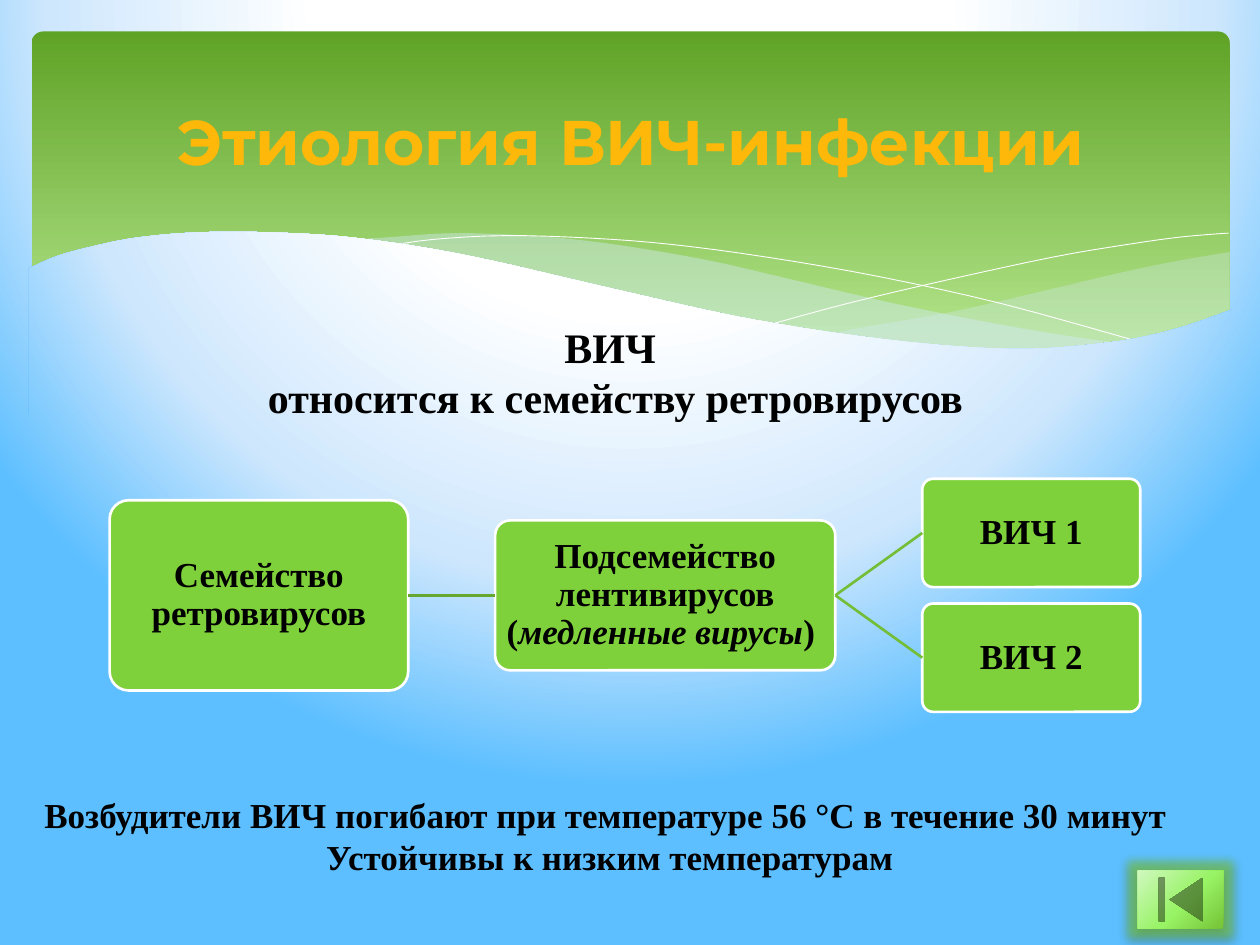
import pptx
import pptx.dml.color
import pptx.enum.shapes
import pptx.enum.text
import pptx.oxml
import pptx.oxml.ns
import pptx.util
from lxml import etree

Inches, Pt = pptx.util.Inches, pptx.util.Pt
RGB = pptx.dml.color.RGBColor.from_string
SHAPE = pptx.enum.shapes.MSO_SHAPE
MIDDLE = pptx.enum.text.MSO_ANCHOR.MIDDLE
CENTER = pptx.enum.text.PP_ALIGN.CENTER
qn = pptx.oxml.ns.qn
NS = pptx.oxml.ns.nsdecls("a")

COLORS = {
    "white": "FFFFFF", "black": "000000", "title": "FEB80A",
    "banner_top": "5FA326", "banner_bottom": "B2E389", "wave": "D6ECFF",
    "node": "7FD13B", "trunk": "66A72F", "branch": "73BE36",
    "sky_mid": "CEE7FD", "sky": "5DBFFF",
    "button_light": "D0F8BF", "button_mid": "98F365", "button_dark": "76C337",
}
SERIF = {"name": "Times New Roman", "bold": True}
TITLE = {"name": "Montserrat", "bold": True, "size": Pt(36)}
HEADING = SERIF | {"size": Pt(24)}
BODY = SERIF | {"size": Pt(20)}


def write(box, lines, style, color="black", spacing=1.0):
    """Fill a box with centred lines, each a list of (text, italic) spans."""
    frame = box.text_frame
    frame.word_wrap = True
    for number, spans in enumerate(lines):
        para = frame.add_paragraph() if number else frame.paragraphs[0]
        para.alignment, para.line_spacing = CENTER, spacing
        for text, italic in spans:
            span = para.add_run()
            span.text = text
            for key, value in style.items():
                setattr(span.font, key, value)
            span.font.italic = italic
            span.font.color.rgb = RGB(COLORS[color])
    return frame


def draw_curve(points, corners=(), closed=False):
    """Freeform along a Catmull-Rom curve, then straight through corners."""
    padded = [points[0], *points, points[-1]]
    smooth = []
    for a, b, c, d in zip(padded, padded[1:], padded[2:], padded[3:]):
        for t in (0.25, 0.5, 0.75, 1):
            smooth.append([
                Inches(0.5 * (2 * q + (r - p) * t + (2 * p - 5 * q + 4 * r - s) * t**2
                              + (3 * q - p - 3 * r + s) * t**3))
                for p, q, r, s in zip(a, b, c, d)])
    smooth += [(Inches(x), Inches(y)) for x, y in corners]
    builder = page.shapes.build_freeform(Inches(points[0][0]), Inches(points[0][1]))
    builder.add_line_segments(smooth, close=closed)
    curve = builder.convert_to_shape()
    curve.shadow.inherit = False
    return curve


deck = pptx.Presentation()
deck.slide_width, deck.slide_height = Inches(10), Inches(7.5)
page = deck.slides.add_slide(deck.slide_layouts[6])
page.background.fill.gradient()

# Banner
banner = page.shapes.add_shape(
    SHAPE.ROUNDED_RECTANGLE, Inches(0.25), Inches(0.25), Inches(9.51), Inches(2.7))
banner.adjustments[0] = 0.034
banner.shadow.inherit = False
banner.line.fill.background()
banner.fill.gradient()
banner.fill.gradient_angle = 270
for stop, position, name in zip(
        banner.fill.gradient_stops, (0, 0.9), ("banner_top", "banner_bottom")):
    stop.position, stop.color.rgb = position, RGB(COLORS[name])

# Translucent waves: outline and opacity in percent
waves = [
    ([(9.76, 2), (9.35, 2.07), (8.91, 2.16), (8.32, 2.3), (7.53, 2.48), (6.61, 2.65),
      (7.05, 2.71), (7.57, 2.76), (8.14, 2.78), (8.63, 2.75), (9.05, 2.69),
      (9.42, 2.59), (9.76, 2.47)], 29),
    ([(8.93, 2.73), (8.37, 2.65), (7.75, 2.54), (7.06, 2.4), (6.29, 2.22), (5.69, 2.08),
      (5.14, 1.98), (4.65, 1.91), (4.2, 1.87), (3.61, 1.85), (3.13, 1.88), (2.86, 1.91),
      (3.42, 1.99), (4.04, 2.11), (4.91, 2.32), (5.66, 2.48), (6.34, 2.61), (6.95, 2.7),
      (7.48, 2.76), (8.07, 2.78), (8.57, 2.77), (8.93, 2.73)], 40),
]
for points, opacity in waves:
    wave = draw_curve(points, closed=True)
    wave.line.fill.background()
    wave.fill.solid()
    wave.fill.fore_color.rgb = RGB(COLORS["wave"])
    tint = wave._element.spPr.find(".//" + qn("a:srgbClr"))
    etree.SubElement(tint, qn("a:alpha"), val=str(opacity * 1000))

hairlines = [
    [(3.09, 1.95), (3.44, 1.9), (4.01, 1.87), (4.69, 1.89), (5.33, 1.94), (6.08, 2.04),
     (6.95, 2.19), (7.95, 2.41), (9.07, 2.72)],
    [(6.13, 2.57), (6.72, 2.41), (7.48, 2.23), (8.36, 2.04), (8.95, 1.94), (9.38, 1.88),
     (9.75, 1.85)],
]
for points in hairlines:
    hairline = draw_curve(points)
    hairline.fill.background()
    hairline.line.color.rgb = RGB(COLORS["white"])
    hairline.line.width = Pt(0.5)

# Lower edge of the banner, filled with the slide background
edge = draw_curve(
    [(9.77, 2.46), (9.4, 2.59), (8.99, 2.69), (8.5, 2.75), (8.09, 2.77), (7.61, 2.75),
     (7.08, 2.7), (6.48, 2.62), (5.79, 2.5), (5.03, 2.33), (4.47, 2.2), (3.91, 2.07),
     (3.4, 1.97), (2.92, 1.9), (2.5, 1.86), (1.93, 1.84), (1.46, 1.85), (1.06, 1.89),
     (0.76, 1.95), (0.46, 2.03), (0.23, 2.13)],
    corners=[(0.23, 3.29), (9.77, 3.29)], closed=True)
edge.line.fill.background()
edge._element.remove(edge._element.find(qn("p:style")))
edge._element.set("useBgFill", "1")

# Text
texts = [
    ((0.51, 0.6, 9, 1.02), ["Этиология ВИЧ-инфекции"], TITLE, "title"),
    ((0, 2.5, 9.77, 0.91), ["ВИЧ ", "относится к семейству ретровирусов"], HEADING, "black"),
    ((0.23, 6.25, 9.22, 0.77),
     ["Возбудители ВИЧ погибают при температуре 56 °С в течение 30 минут ",
      "Устойчивы к низким температурам"], BODY, "black"),
]
for place, lines, style, color in texts:
    box = page.shapes.add_textbox(*map(Inches, place))
    frame = write(box, [[(line, False)] for line in lines], style, color)
    if style is TITLE:
        frame.vertical_anchor = MIDDLE

# Classification tree
nodes = [
    ((0.87, 3.97, 2.37, 1.51), [("Семейство ретровирусов", False)]),
    ((3.93, 4.13, 2.7, 1.19), [("Подсемейство лентивирусов (", False),
                               ("медленные вирусы", True), (") ", False)]),
    ((7.32, 3.8, 1.73, 0.86), [("ВИЧ 1", False)]),
    ((7.32, 4.79, 1.73, 0.86), [("ВИЧ 2", False)]),
]
tree = []
for place, spans in nodes:
    node = page.shapes.add_shape(SHAPE.ROUNDED_RECTANGLE, *map(Inches, place))
    node.adjustments[0] = 0.1
    node.shadow.inherit = False
    node.fill.solid()
    node.fill.fore_color.rgb = RGB(COLORS["node"])
    node.line.color.rgb = RGB(COLORS["white"])
    node.line.width = Pt(1.5)
    frame = write(node, [spans], BODY, spacing=0.9)
    frame.vertical_anchor = MIDDLE
    for side in ("left", "right", "top", "bottom"):
        setattr(frame, "margin_" + side, Inches(0.05))
    tree.append(node)

family, subfamily, *types = tree
links = [(family, subfamily, "trunk")] + [(subfamily, kind, "branch") for kind in types]
for parent, child, color in links:
    link = page.shapes.add_connector(pptx.enum.shapes.MSO_CONNECTOR.STRAIGHT, 0, 0, 0, 0)
    link.begin_connect(parent, 3)
    link.end_connect(child, 1)
    link.line.color.rgb = RGB(COLORS[color])
    link.line.width = Pt(1.5)
    etree.SubElement(link._element.spPr, qn("a:effectLst"))

# Button back to the start
button = page.shapes.add_shape(
    SHAPE.ACTION_BUTTON_BEGINNING, Inches(9.03), Inches(6.91), Inches(0.68), Inches(0.46))
button.line.fill.background()
button.fill.gradient()
button.shadow.inherit = False
effects = button._element.spPr.find(qn("a:effectLst"))
for effect in (
    f'<a:glow {NS} rad="139700"><a:srgbClr val="{COLORS["node"]}">'
    '<a:alpha val="60000"/></a:srgbClr></a:glow>',
    f'<a:outerShdw {NS} blurRad="50800" dist="25400" dir="5400000">'
    f'<a:srgbClr val="{COLORS["black"]}"><a:alpha val="45000"/></a:srgbClr></a:outerShdw>',
):
    effects.append(pptx.oxml.parse_xml(effect))

# Circular gradients: stops and focus rectangle in percent
circles = [
    (page._element.find(".//" + qn("p:bg")),
     [(40, "white"), (74, "sky_mid"), (100, "sky")], (20, -40, 20, 140)),
    (button._element.spPr,
     [(0, "button_light"), (55, "button_mid"), (100, "button_dark")], (-40, -90, 140, 190)),
]
for owner, stops, focus in circles:
    gradient = owner.find(".//" + qn("a:gradFill"))
    for part in list(gradient):
        gradient.remove(part)
    stop_list = etree.SubElement(gradient, qn("a:gsLst"))
    for position, name in stops:
        stop = etree.SubElement(stop_list, qn("a:gs"), pos=str(position * 1000))
        etree.SubElement(stop, qn("a:srgbClr"), val=COLORS[name])
    circle = etree.SubElement(gradient, qn("a:path"), path="circle")
    etree.SubElement(circle, qn("a:fillToRect"),
                     {side: str(value * 1000) for side, value in zip("ltrb", focus)})

deck.save("out.pptx")
